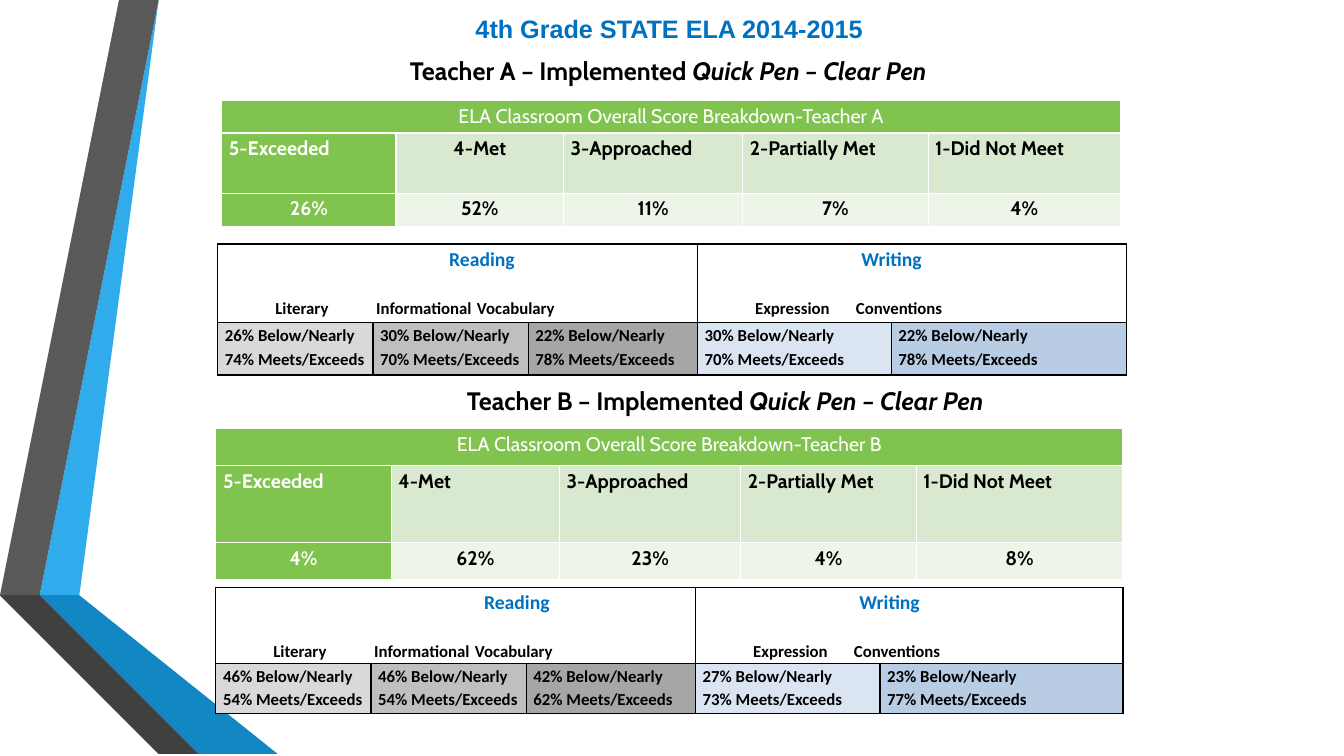
from dataclasses import dataclass

from lxml.etree import SubElement as Sub
from pptx import Presentation as Deck
from pptx.dml.color import RGBColor as Rgb
from pptx.enum.text import MSO_ANCHOR as Anchor, MSO_AUTO_SIZE as Fit, PP_ALIGN as Align
from pptx.oxml.ns import qn
from pptx.util import Cm, Pt

TITLE = "4th Grade STATE ELA 2014-2015"
PROGRAM = "Quick Pen – Clear Pen"
LEVELS = ["5-Exceeded", "4-Met", "3-Approached", "2-Partially Met", "1-Did Not Meet"]
# Heading, names below it, left indent of the heading, tab stops of the names (cm)
READING = ("Reading", ["Literary", "Informational", "Vocabulary"], [0.28, 4.57, 9.47])
WRITING = ("Writing", ["Expression", "Conventions"], [0.9, 6.98])

TEACHERS = [
    {
        "name": "A", "head": (9.73, 1.27, 14.22, 1.02),
        "levels": ["26%", "52%", "11%", "7%", "4%"], "centred": {1},
        "top": (5.59, 2.54), "cols": [4.39, 4.22, 4.52, 4.67, 4.85], "rows": [0.81, 1.52, 0.84],
        "skills": [(26, 74), (30, 70), (22, 78), (30, 70), (22, 78)], "indents": (5.65, 3.95),
        "low": (5.49, 6.15), "widths": [3.91, 3.91, 4.27, 4.88, 5.92], "heights": [1.98, 1.32],
    },
    {
        "name": "B", "head": (11.2, 9.58, 14.15, 1.02),
        "levels": ["4%", "62%", "23%", "4%", "8%"], "centred": set(),
        "top": (5.44, 10.8), "cols": [4.42, 4.24, 4.57, 4.42, 5.21], "rows": [0.94, 1.93, 0.94],
        "skills": [(46, 54), (46, 54), (42, 62), (27, 73), (23, 77)], "indents": (6.58, 3.95),
        "low": (5.44, 14.81), "widths": [3.91, 3.91, 4.27, 4.65, 6.12], "heights": [1.9, 1.27],
    },
]

RIBBONS = [
    ("30ACEC", [(1.27, 14.68), (1.96, 14.81), (4.39, 0), (3.68, 0)]),
    ("595959", [(3.53, 0), (2.82, 0), (0.41, 14.55), (1.12, 14.66)]),
    ("262626", [(0.41, 14.55), (3.68, 19.05), (3.84, 19.05)]),
    ("0C5A82", [(1.27, 14.71), (5.28, 19.05), (5.41, 19.05)]),
    ("1287C3", [(1.27, 14.71), (5.41, 19.05), (7.19, 19.05), (1.96, 14.81), (1.27, 14.68)]),
    ("404040", [(5.13, 19.05), (1.22, 14.81), (1.09, 14.68), (1.12, 14.66),
                (0.41, 14.55), (3.84, 19.05)]),
]


@dataclass(frozen=True)
class Theme:
    blue: str = "0070C0"
    black: str = "000000"
    white: str = "FFFFFF"
    green: str = "80C34F"
    pale: str = "D8E9D0"
    faint: str = "EDF5E9"
    skills: tuple = ("D9D9D9", "BFBFBF", "A6A6A6", "DBE5F1", "B8CCE4")
    large: int = 18
    mid: int = 14
    small: int = 12
    line: float = 1.15


T = Theme()
HEAD = {"name": "Cabin", "size": Pt(T.large), "bold": True}
LEVEL = {"name": "Cabin", "size": Pt(T.mid), "bold": True}
BAND = LEVEL | {"bold": False}
AREA = {"name": "Calibri", "size": Pt(T.mid), "bold": True}
SKILL = AREA | {"size": Pt(T.small)}


def apply(item, style):
    for key, value in style.items():
        setattr(item, key, value)


def write(para, text, style, color, **layout):
    run = para.add_run()
    run.text = text
    apply(run.font, style)
    run.font.color.rgb = Rgb.from_string(color)
    apply(para, layout)


def indent(para, left=0, stops=()):
    """Set the left margin and the tab stops, in cm."""
    prop = para._p.get_or_add_pPr()
    prop.set("marL", str(Cm(left)))
    prop.set("indent", "0")
    if stops:
        tabs = Sub(prop, qn("a:tabLst"))
        for stop in stops:
            Sub(tabs, qn("a:tab"), pos=str(Cm(stop)), algn="l")


def edge(cell, color):
    prop = cell._tc.get_or_add_tcPr()
    for side in "LRTB":
        line = Sub(prop, qn(f"a:ln{side}"), w=str(Pt(1)))
        Sub(Sub(line, qn("a:solidFill")), qn("a:srgbClr"), val=color)


def paint(cell, color):
    cell.fill.solid()
    cell.fill.fore_color.rgb = Rgb.from_string(color)


def grid(slide, spot, cols, rows, color):
    """Add a plain table with borders in one colour."""
    size = (sum(cols), sum(rows))
    table = slide.shapes.add_table(len(rows), len(cols), *map(Cm, spot + size)).table
    apply(table, {"first_row": False, "horz_banding": False})
    for col, width in zip(table.columns, cols):
        col.width = Cm(width)
    for row, height in zip(table.rows, rows):
        row.height = Cm(height)
    pads = {"margin_left": Cm(0.18), "margin_right": Cm(0.18), "margin_top": 0, "margin_bottom": 0}
    for cell in table.iter_cells():
        apply(cell, pads)
        edge(cell, color)
        cell.fill.background()
    return table


def add_levels(slide, data):
    table = grid(slide, data["top"], data["cols"], data["rows"], T.white)
    band = table.cell(0, 0)
    band.merge(table.cell(0, 4))
    paint(band, T.green)
    write(band.text_frame.paragraphs[0], f"ELA Classroom Overall Score Breakdown-Teacher {data['name']}",
          BAND, T.white, alignment=Align.CENTER, line_spacing=T.line)
    lines = [(LEVELS, T.pale, data["centred"]), (data["levels"], T.faint, set(range(5)))]
    for row, (texts, fill, mid) in enumerate(lines, 1):
        for col, text in enumerate(texts):
            cell = table.cell(row, col)
            paint(cell, fill if col else T.green)
            write(cell.text_frame.paragraphs[0], text, LEVEL, T.black if col else T.white,
                  alignment=Align.CENTER if col in mid else Align.LEFT, line_spacing=T.line)


def add_skills(slide, data):
    table = grid(slide, data["low"], data["widths"], data["heights"], T.black)
    col = 0
    for (area, names, stops), left in zip((READING, WRITING), data["indents"]):
        cell = table.cell(0, col)
        cell.merge(table.cell(0, col + len(names) - 1))
        col += len(names)
        frame = cell.text_frame
        write(frame.paragraphs[0], area, AREA, T.blue, line_spacing=T.line)
        indent(frame.paragraphs[0], left)
        para = frame.add_paragraph()
        write(para, "".join("\t" + name for name in names), SKILL, T.black,
              line_spacing=T.line, space_before=Pt(16.8))
        indent(para, stops=stops)
    for col, (below, meets) in enumerate(data["skills"]):
        cell = table.cell(1, col)
        paint(cell, T.skills[col])
        frame = cell.text_frame
        write(frame.paragraphs[0], f"{below}% Below/Nearly", SKILL, T.black, line_spacing=T.line)
        write(frame.add_paragraph(), f"{meets}% Meets/Exceeds", SKILL, T.black, line_spacing=T.line)


def add_ribbon(slide, color, points):
    pen = slide.shapes.build_freeform(*points[0], scale=Cm(1))
    pen.add_line_segments(points[1:], close=True)
    shape = pen.convert_to_shape()
    shape.shadow.inherit = False
    paint(shape, color)
    shape.line.fill.background()


def add_title(slide):
    title = slide.shapes.title
    apply(title, {"left": Cm(11.43), "top": Cm(0.18), "width": Cm(10.87), "height": Cm(1.07)})
    frame = title.text_frame
    apply(frame, {"word_wrap": False, "auto_size": Fit.NONE, "vertical_anchor": Anchor.MIDDLE})
    write(frame.paragraphs[0], TITLE, HEAD | {"name": "Arial"}, T.blue, alignment=Align.CENTER)


def add_head(slide, data):
    frame = slide.shapes.add_textbox(*map(Cm, data["head"])).text_frame
    frame.word_wrap = True
    para = frame.paragraphs[0]
    write(para, f"Teacher {data['name']} – Implemented ", HEAD, T.black, alignment=Align.CENTER)
    write(para, PROGRAM, HEAD | {"italic": True}, T.black)


def main():
    deck = Deck()
    apply(deck, {"slide_width": Cm(33.87), "slide_height": Cm(19.05)})
    slide = deck.slides.add_slide(deck.slide_layouts[5])
    for color, points in RIBBONS:
        add_ribbon(slide, color, points)
    add_title(slide)
    for data in TEACHERS:
        add_head(slide, data)
        add_levels(slide, data)
        add_skills(slide, data)
    deck.save("out.pptx")


if __name__ == "__main__":
    main()
